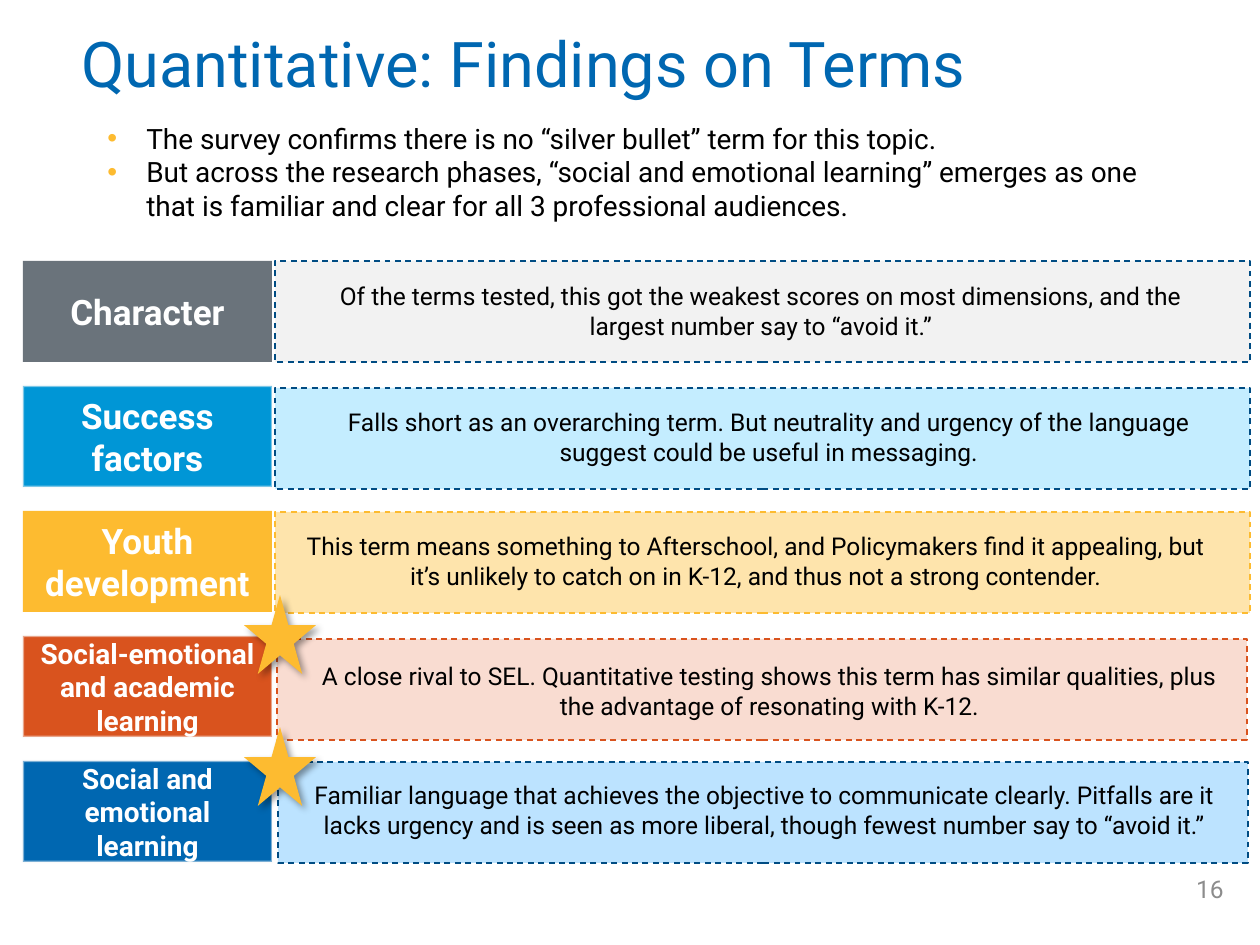
from lxml import etree
from pptx import Presentation
from pptx.dml.color import RGBColor
from pptx.enum.dml import MSO_LINE
from pptx.enum.shapes import MSO_SHAPE
from pptx.enum.text import MSO_ANCHOR, PP_ALIGN
from pptx.oxml.ns import qn
from pptx.util import Pt

RECT, STAR = MSO_SHAPE.RECTANGLE, MSO_SHAPE.STAR_5_POINT
DASH = MSO_LINE.DASH
TOP, MIDDLE = MSO_ANCHOR.TOP, MSO_ANCHOR.MIDDLE
LEFT, CENTER, RIGHT = PP_ALIGN.LEFT, PP_ALIGN.CENTER, PP_ALIGN.RIGHT

PX = 914400 / 126
FONT = "Roboto"
BLUE, NAVY, GOLD, ORANGE = "0067B1", "004C83", "FDBB30", "D9531E"
BLACK, WHITE = "000000", "FFFFFF"

ROW_TOP, ROW_PITCH, ROW_HEIGHT = 261, 125, 101
LABEL_LEFT, LABEL_WIDTH = 23, 249

# label, label size, label fill, outlined, panel fill, panel border,
# panel (left, top, width), finding (left, top, width), finding
TERMS = [
    ("Character", 20, "6A737B", False, "F2F2F2", NAVY,
     (275, 261, 975), (307, 275, 908),
     "Of the terms tested, this got the weakest scores on most dimensions, "
     "and the largest number say to “avoid it.”"),
    ("Success factors", 20, "0096D6", True, "C4EDFF", NAVY,
     (275, 388, 975), (291, 401, 956),
     "Falls short as an overarching term. But neutrality and urgency of the "
     "language suggest could be useful in messaging."),
    ("Youth development", 20, GOLD, False, "FEE4AC", GOLD,
     (275, 512, 975), (278, 525, 956),
     "This term means something to Afterschool, and Policymakers find it "
     "appealing, but it’s unlikely to catch on in K-12, and thus not a strong "
     "contender."),
    ("Social-emotional and academic learning", 16, ORANGE, True, "F9DCD1", ORANGE,
     (277, 639, 970), (294, 655, 951),
     "A close rival to SEL. Quantitative testing shows this term has similar "
     "qualities, plus the advantage of resonating with K-12."),
    ("Social and emotional learning", 16, BLUE, True, "BCE3FF", NAVY,
     (278, 762, 970), (289, 774, 951),
     "Familiar language that achieves the objective to communicate clearly. "
     "Pitfalls are it lacks urgency and is seen as more liberal, though fewest "
     "number say to “avoid it.”"),
]
SURVEY_POINTS = [
    "The survey confirms there is no “silver bullet” term for this topic.",
    "But across the research phases, “social and emotional learning” emerges as "
    "one that is familiar and clear for all 3 professional audiences.",
]


def px(length):
    return round(length * PX)


def rgb(value):
    return RGBColor.from_string(value)


def write(shape, lines, size, color, align, anchor=TOP, bold=False):
    frame = shape.text_frame
    frame.word_wrap = True
    frame.vertical_anchor = anchor
    frame.text = "\n".join(lines)
    for paragraph in frame.paragraphs:
        paragraph.alignment = align
        for run in paragraph.runs:
            run.font.name = FONT
            run.font.size = Pt(size)
            run.font.bold = bold
            run.font.color.rgb = rgb(color)
    return frame


def add_text(slide, box, lines, size, color, align=LEFT, anchor=TOP):
    shape = slide.shapes.add_textbox(*map(px, box))
    return write(shape, lines, size, color, align, anchor)


def add_filled(slide, kind, box, fill):
    shape = slide.shapes.add_shape(kind, *map(px, box))
    shape.shadow.inherit = False
    shape.fill.solid()
    shape.fill.fore_color.rgb = rgb(fill)
    shape.line.fill.background()
    return shape


def set_line(shape, color, width):
    shape.line.color.rgb = rgb(color)
    shape.line.width = Pt(width)


def add_alpha(color_element, percent):
    etree.SubElement(color_element, qn("a:alpha"), val=str(percent * 1000))


def add_bullet(paragraph, color):
    properties = paragraph._p.get_or_add_pPr()
    indent = px(39)
    properties.set("marL", str(indent))
    properties.set("indent", str(-indent))
    bullet_color = etree.SubElement(properties, qn("a:buClr"))
    etree.SubElement(bullet_color, qn("a:srgbClr"), val=color)
    etree.SubElement(properties, qn("a:buFont"), typeface="Arial")
    etree.SubElement(properties, qn("a:buChar"), char="•")


def add_label(slide, row, text, size, fill, outlined):
    box = (LABEL_LEFT, ROW_TOP + row * ROW_PITCH, LABEL_WIDTH, ROW_HEIGHT)
    label = add_filled(slide, RECT, box, fill)
    if outlined:
        set_line(label, "F9F9F9", 1.35)
        add_alpha(label.line._ln.find(".//" + qn("a:srgbClr")), 50)
    write(label, [text], size, WHITE, CENTER, MIDDLE, bold=True)


def add_panel(slide, place, fill, border):
    panel = add_filled(slide, RECT, (*place, ROW_HEIGHT), fill)
    set_line(panel, border, 0.85)
    panel.line.dash_style = DASH


def add_star(slide, top):
    star = add_filled(slide, STAR, (244, top, 72, 79), GOLD)
    effects = star._element.spPr.find(qn("a:effectLst"))
    shadow = etree.SubElement(
        effects, qn("a:outerShdw"), blurRad=str(Pt(4)), dist=str(Pt(3)),
        dir=str(45 * 60000), algn="tl", rotWithShape="0")
    add_alpha(etree.SubElement(shadow, qn("a:srgbClr"), val=BLACK), 40)


def main():
    presentation = Presentation()
    presentation.slide_width = px(1260)
    presentation.slide_height = px(945)
    slide = presentation.slides.add_slide(presentation.slide_layouts[6])

    # Title and page number
    title = add_text(slide, (69, 0, 988, 134), ["Quantitative: Findings on Terms"],
                     36, BLUE, anchor=MIDDLE)
    title.paragraphs[0].line_spacing = 0.9
    add_text(slide, (1143, 864, 93, 50), ["16"], 14, "8C8C8C", RIGHT, MIDDLE)

    # Survey summary
    summary = add_text(slide, (95, 115, 1058, 115), SURVEY_POINTS, 16, BLACK)
    for paragraph in summary.paragraphs:
        add_bullet(paragraph, GOLD)

    # One row for each term tested
    for row, term in enumerate(TERMS):
        name, size, fill, outlined, tint, border, panel, place, finding = term
        add_panel(slide, panel, tint, border)
        add_text(slide, (*place, 72), [finding], 14, BLACK, CENTER)
        add_label(slide, row, name, size, fill, outlined)

    # Stars on the two leading terms
    for top in (727, 595):
        add_star(slide, top)

    presentation.save("out.pptx")


if __name__ == "__main__":
    main()
